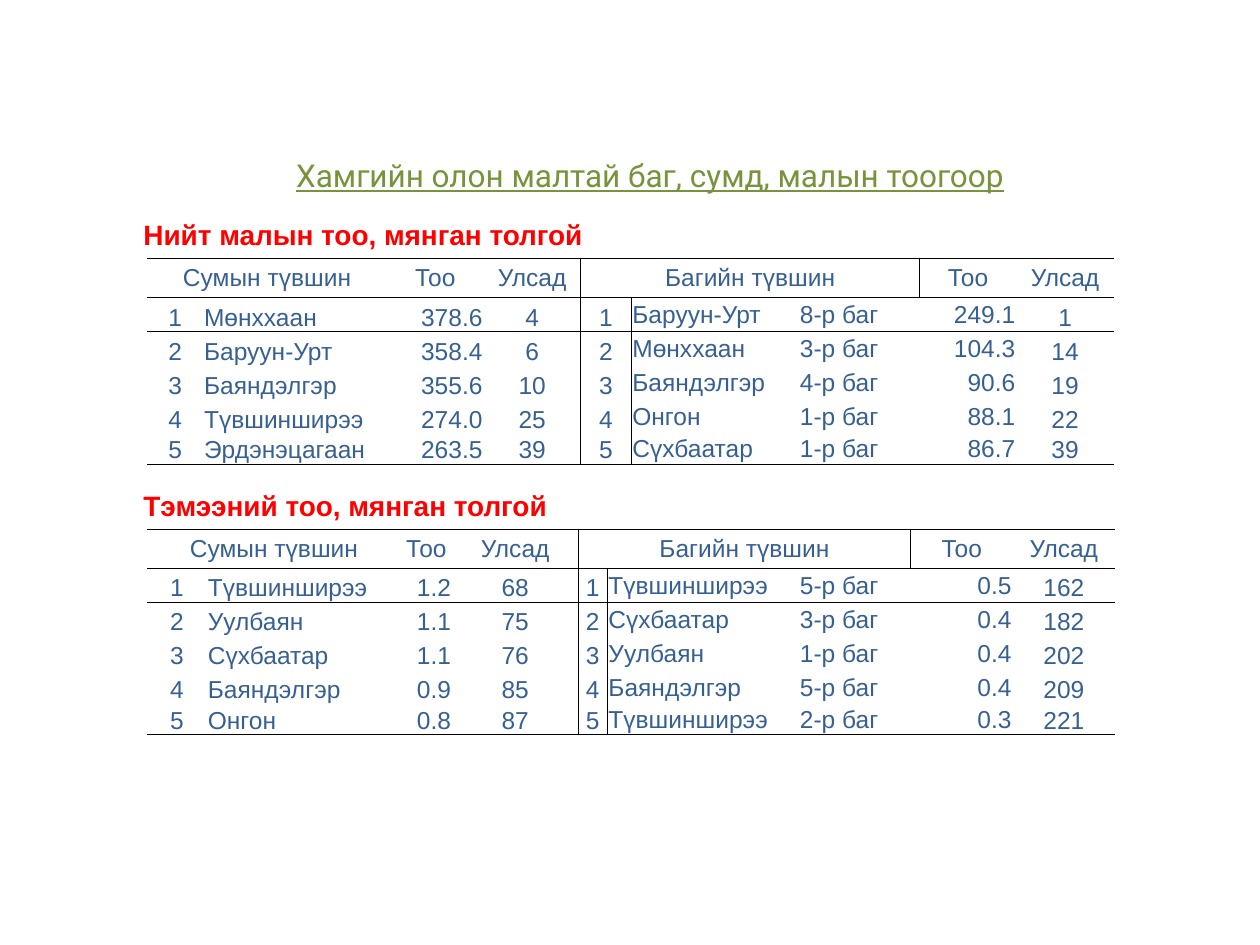
import pptx
import pptx.util
import pptx.dml.color
import pptx.enum.text
import lxml.etree
from pptx.util import Inches

ALIGN = pptx.enum.text.PP_ALIGN
ANCHOR = pptx.enum.text.MSO_ANCHOR
NO_STYLE = "{2D5ABB26-0587-4C30-8999-92F81FD0307C}"


def write_text(frame, text, size=14, color="376092", font="Arial",
               bold=False, underline=False, align=ALIGN.LEFT):
    para = frame.paragraphs[0]
    para.alignment = align
    span = para.add_run()
    span.text = text
    span.font.size = pptx.util.Pt(size)
    span.font.name = font
    span.font.bold = bold
    span.font.underline = underline
    span.font.color.rgb = pptx.dml.color.RGBColor.from_string(color)


def add_border(cell, side, color="000000", width=0.5):
    properties = cell._tc.get_or_add_tcPr()
    namespace = "{http://schemas.openxmlformats.org/drawingml/2006/main}"
    line = lxml.etree.SubElement(properties, namespace + "ln" + side,
                                 w=str(pptx.util.Pt(width)))
    fill = lxml.etree.SubElement(line, namespace + "solidFill")
    lxml.etree.SubElement(fill, namespace + "srgbClr", val=color)


deck = pptx.Presentation()
deck.slide_width = Inches(10)
deck.slide_height = Inches(7.5)
page = deck.slides.add_slide(deck.slide_layouts[5])

title = page.shapes.title
title.left, title.top = Inches(2.25), Inches(1.19)
title.width, title.height = Inches(5.83), Inches(0.4)
title.text_frame.vertical_anchor = ANCHOR.TOP
title.text_frame.auto_size = pptx.enum.text.MSO_AUTO_SIZE.NONE
write_text(title.text_frame, "Хамгийн олон малтай баг, сумд, малын тоогоор",
           size=18, color="77933C", font="Roboto", underline=True)

header = ["Сумын түвшин", "", "Тоо", "Улсад", "Багийн түвшин", "", "", "Тоо", "Улсад"]
row_heights = [0.31, 0.27, 0.27, 0.27, 0.27, 0.23]
column_aligns = [ALIGN.CENTER, ALIGN.LEFT, ALIGN.RIGHT, ALIGN.CENTER, ALIGN.CENTER,
                 ALIGN.LEFT, ALIGN.LEFT, ALIGN.RIGHT, ALIGN.CENTER]

sections = [
    ("Нийт малын тоо, мянган толгой", 1.68, 2.05,
     [0.44, 1.46, 0.77, 0.77, 0.4, 1.33, 0.96, 0.77, 0.77],
     [("Мөнххаан", "378.6", "4", "Баруун-Урт", "8-р баг", "249.1", "1"),
      ("Баруун-Урт", "358.4", "6", "Мөнххаан", "3-р баг", "104.3", "14"),
      ("Баяндэлгэр", "355.6", "10", "Баяндэлгэр", "4-р баг", "90.6", "19"),
      ("Түвшинширээ", "274.0", "25", "Онгон", "1-р баг", "88.1", "22"),
      ("Эрдэнэцагаан", "263.5", "39", "Сүхбаатар", "1-р баг", "86.7", "39")]),
    ("Тэмээний тоо, мянган толгой", 3.83, 4.2,
     [0.47, 1.54, 0.41, 1, 0.23, 1.52, 0.89, 0.81, 0.81],
     [("Түвшинширээ", "1.2", "68", "Түвшинширээ", "5-р баг", "0.5", "162"),
      ("Уулбаян", "1.1", "75", "Сүхбаатар", "3-р баг", "0.4", "182"),
      ("Сүхбаатар", "1.1", "76", "Уулбаян", "1-р баг", "0.4", "202"),
      ("Баяндэлгэр", "0.9", "85", "Баяндэлгэр", "5-р баг", "0.4", "209"),
      ("Онгон", "0.8", "87", "Түвшинширээ", "2-р баг", "0.3", "221")]),
]

for heading, heading_top, table_top, column_widths, records in sections:
    box = page.shapes.add_textbox(Inches(1.04), Inches(heading_top),
                                  Inches(5.83), Inches(0.37))
    box.text_frame.word_wrap = True
    write_text(box.text_frame, heading, size=16, color="FF0000", bold=True)

    frame = page.shapes.add_table(6, 9, Inches(1.17), Inches(table_top),
                                  Inches(7.67), Inches(1.65))
    table = frame.table
    table.first_row = False
    table.horz_banding = False
    table._tbl.tblPr[0].text = NO_STYLE
    for column, width in zip(table.columns, column_widths):
        column.width = Inches(width)
    for row, height in zip(table.rows, row_heights):
        row.height = Inches(height)
    table.cell(0, 0).merge(table.cell(0, 1))
    table.cell(0, 4).merge(table.cell(0, 6))

    lines = [header]
    for rank, record in enumerate(records, start=1):
        lines.append([str(rank), *record[:3], str(rank), *record[3:]])

    for row_index, line in enumerate(lines):
        for column_index, text in enumerate(line):
            cell = table.cell(row_index, column_index)
            cell.margin_left = cell.margin_right = cell.margin_top = Inches(0.01)
            cell.margin_bottom = 0
            in_header = row_index == 0
            middle = in_header or column_index in (5, 6, 7)
            cell.vertical_anchor = ANCHOR.MIDDLE if middle else ANCHOR.BOTTOM
            if column_index == 4:
                add_border(cell, "L")
            if column_index == 3:
                add_border(cell, "R")
            if row_index in (0, 1):
                add_border(cell, "T")
            if row_index in (0, 5):
                add_border(cell, "B")
            cell.fill.background()
            if text:
                align = ALIGN.CENTER if in_header else column_aligns[column_index]
                write_text(cell.text_frame, text, align=align)

deck.save("out.pptx")
